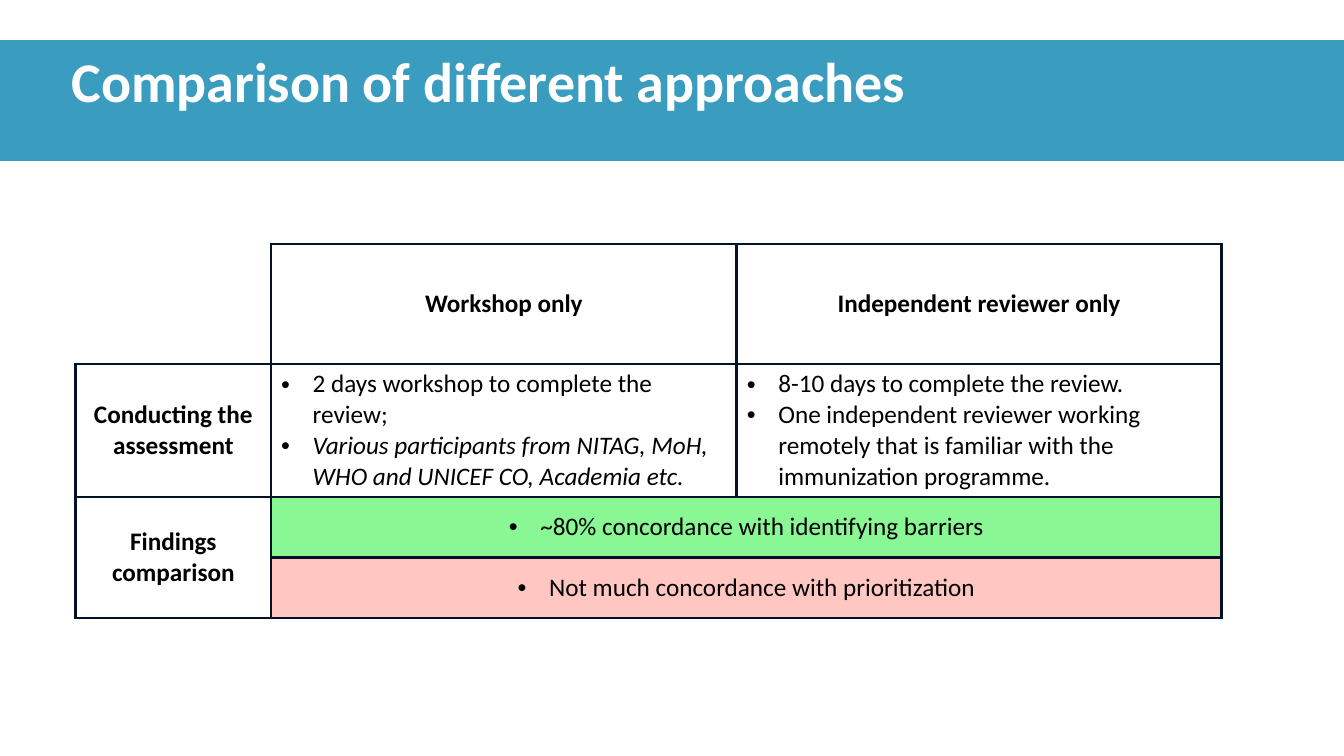
from dataclasses import dataclass

from lxml import etree
from pptx import Presentation
from pptx.dml.color import RGBColor
from pptx.enum.shapes import MSO_SHAPE
from pptx.enum.text import MSO_ANCHOR, MSO_AUTO_SIZE, PP_ALIGN
from pptx.oxml.ns import qn
from pptx.util import Pt

RECT = MSO_SHAPE.RECTANGLE
MIDDLE = MSO_ANCHOR.MIDDLE
NO_FIT = MSO_AUTO_SIZE.NONE
LEFT, CENTER = PP_ALIGN.LEFT, PP_ALIGN.CENTER

FONT = "Calibri"
COLORS = {
    "band": "3A9DBF",
    "white": "FFFFFF",
    "text": "000000",
    "border": "031227",
    "green": "89F793",
    "red": "FFC6C2",
}
WIDTH, HEIGHT = 960, 540
COLS = (139.68, 332.64, 346.32)
ROWS = (85.68, 93.6, 43.2, 43.2)
INDENT = 22.5


@dataclass
class Line:
    text: str
    bold: bool = False
    italic: bool = False


@dataclass
class Entry:
    row: int
    col: int
    lines: tuple[Line, ...]
    align: PP_ALIGN = CENTER
    bullet: bool = False
    fill: str = ""
    span: tuple[int, int] = (1, 1)


ENTRIES = (
    Entry(0, 1, (Line("Workshop only", bold=True),)),
    Entry(0, 2, (Line("Independent reviewer only", bold=True),)),
    Entry(1, 0, (Line("Conducting the assessment", bold=True),)),
    Entry(1, 1, (
        Line("2 days workshop to complete the review;"),
        Line("Various participants from NITAG, MoH, WHO and UNICEF CO, Academia etc.",
             italic=True),
    ), LEFT, bullet=True),
    Entry(1, 2, (
        Line("8-10 days to complete the review."),
        Line("One independent reviewer working remotely that is familiar with "
             "the immunization programme."),
    ), LEFT, bullet=True),
    Entry(2, 0, (Line("Findings comparison", bold=True),), span=(2, 1)),
    Entry(2, 1, (Line("~80% concordance with identifying barriers"),),
          bullet=True, fill="green", span=(1, 2)),
    Entry(3, 1, (Line("Not much concordance with prioritization"),),
          bullet=True, fill="red", span=(1, 2)),
)


def color(name: str) -> RGBColor:
    return RGBColor.from_string(COLORS[name])


def add_bullet(para) -> None:
    props = para._p.get_or_add_pPr()
    props.set("marL", str(Pt(INDENT)))
    props.set("indent", str(-Pt(INDENT)))
    etree.SubElement(props, qn("a:buFont"), typeface="Arial")
    etree.SubElement(props, qn("a:buChar"), char="•")


def write(para, text: str, *, size: float = 18, ink: str = "text",
          bold: bool = False, italic: bool = False,
          align: PP_ALIGN = LEFT, bullet: bool = False) -> None:
    para.alignment = align
    if bullet:
        add_bullet(para)
    run = para.add_run()
    run.text = text
    font = run.font
    font.name, font.size = FONT, Pt(size)
    font.bold, font.italic = bold, italic
    font.color.rgb = color(ink)


def add_border(cell, sides: str) -> None:
    props = cell._tc.get_or_add_tcPr()
    for side in "LRTB":
        if side in sides:
            line = etree.SubElement(props, qn(f"a:ln{side}"), w=str(Pt(2.25)))
            fill = etree.SubElement(line, qn("a:solidFill"))
            etree.SubElement(fill, qn("a:srgbClr"), val=COLORS["border"])
        else:
            line = etree.SubElement(props, qn(f"a:ln{side}"), w="0")
            etree.SubElement(line, qn("a:noFill"))


def fill_cell(table, entry: Entry) -> None:
    cell = table.cell(entry.row, entry.col)
    down, across = entry.span
    if entry.span != (1, 1):
        cell.merge(table.cell(entry.row + down - 1, entry.col + across - 1))
    cell.vertical_anchor = MIDDLE
    if entry.fill:
        cell.fill.solid()
        cell.fill.fore_color.rgb = color(entry.fill)
    frame = cell.text_frame
    for i, line in enumerate(entry.lines):
        para = frame.add_paragraph() if i else frame.paragraphs[0]
        write(para, line.text, bold=line.bold, italic=line.italic,
              align=entry.align, bullet=entry.bullet)


def add_title(slide) -> None:
    title = slide.shapes.title
    title.left, title.top = Pt(43.92), Pt(7.92)
    title.width, title.height = Pt(828), Pt(104.4)
    frame = title.text_frame
    frame.word_wrap = True
    frame.auto_size = NO_FIT
    frame.vertical_anchor = MIDDLE
    para = frame.paragraphs[0]
    para.line_spacing = 0.9
    write(para, "Comparison of different approaches",
          size=40, ink="white", bold=True)

    # Band behind the title
    band = slide.shapes.add_shape(RECT, 0, Pt(28.8), Pt(WIDTH), Pt(85.68))
    band.shadow.inherit = False
    band.fill.solid()
    band.fill.fore_color.rgb = color("band")
    band.line.color.rgb = color("band")
    band.line.width = Pt(1)
    title.element.addprevious(band.element)


def add_grid(slide) -> None:
    frame = slide.shapes.add_table(len(ROWS), len(COLS), Pt(54), Pt(174.24),
                                   Pt(sum(COLS)), Pt(sum(ROWS)))
    table = frame.table
    table.first_row = table.horz_banding = False
    for col, width in zip(table.columns, COLS):
        col.width = Pt(width)
    for row, height in zip(table.rows, ROWS):
        row.height = Pt(height)

    # The corner cell is open at the top and left
    corner = table.cell(0, 0)
    for cell in table.iter_cells():
        add_border(cell, "RB" if cell == corner else "LRTB")
        cell.fill.background()
    for entry in ENTRIES:
        fill_cell(table, entry)


def main() -> None:
    deck = Presentation()
    deck.slide_width, deck.slide_height = Pt(WIDTH), Pt(HEIGHT)
    slide = deck.slides.add_slide(deck.slide_layouts.get_by_name("Title Only"))
    add_title(slide)
    add_grid(slide)
    deck.save("out.pptx")


if __name__ == "__main__":
    main()
